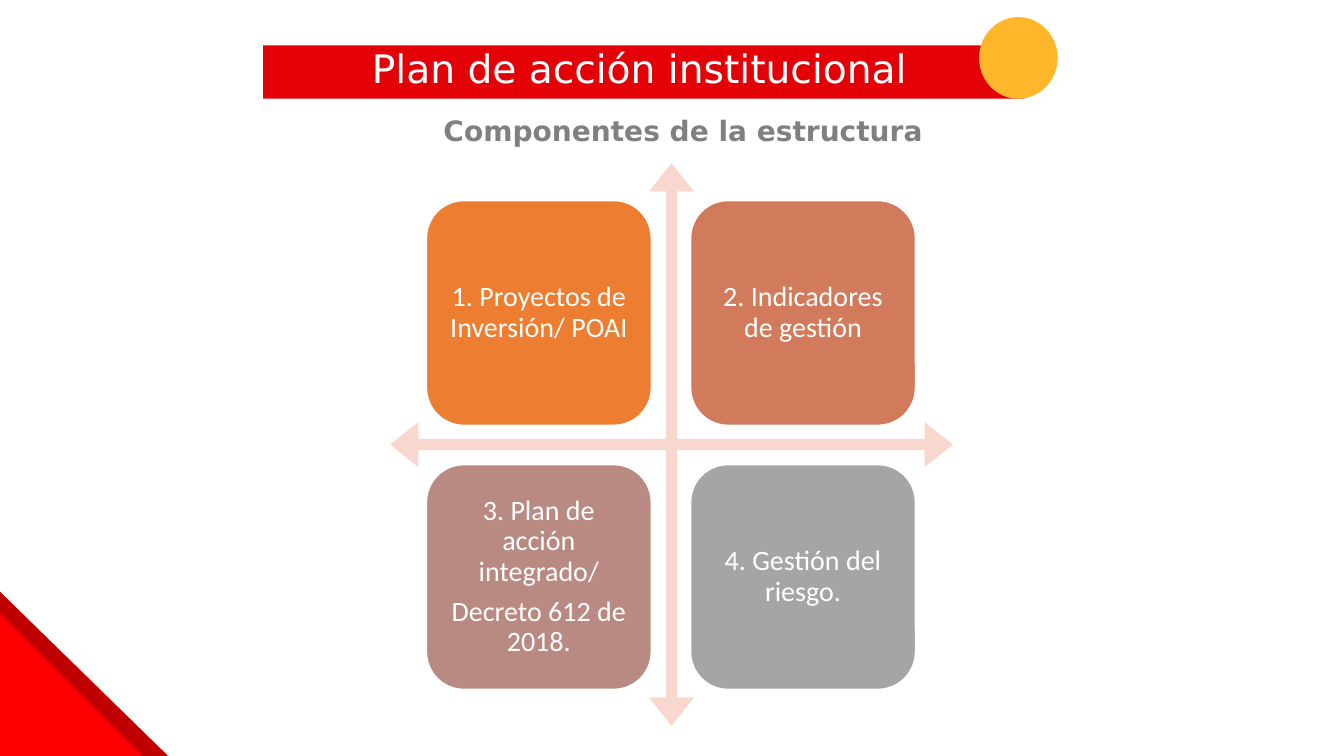
from dataclasses import dataclass

from pptx import Presentation
from pptx.dml.color import RGBColor
from pptx.enum.shapes import MSO_SHAPE
from pptx.enum.text import MSO_ANCHOR, MSO_AUTO_SIZE, PP_ALIGN
from pptx.util import Inches, Pt

RECT = MSO_SHAPE.RECTANGLE
ELLIPSE = MSO_SHAPE.OVAL
TRIANGLE = MSO_SHAPE.RIGHT_TRIANGLE
QUAD_ARROW = MSO_SHAPE.QUAD_ARROW
ROUND_RECT = MSO_SHAPE.ROUNDED_RECTANGLE
MIDDLE = MSO_ANCHOR.MIDDLE
GROW = MSO_AUTO_SIZE.SHAPE_TO_FIT_TEXT
LEFT = PP_ALIGN.LEFT
CENTER = PP_ALIGN.CENTER


@dataclass(frozen=True)
class Theme:
    white: str = "FFFFFF"
    banner: str = "E30006"
    accent: str = "FEB72B"
    subtitle: str = "808080"
    corner_dark: str = "C00000"
    corner_bright: str = "FF0000"
    arrows: str = "F8D7CE"
    heading_font: str = "DejaVu Sans"
    body_font: str = "Calibri"
    title_size: int = 28
    body_size: int = 20


THEME = Theme()

COMPONENTS = [
    (["1. Proyectos de Inversión/ POAI"], "ED7D31"),
    (["2. Indicadores de gestión"], "D17B5C"),
    (["3. Plan de acción integrado/", "Decreto 612 de 2018."], "B98A82"),
    (["4. Gestión del riesgo."], "A5A5A5"),
]
GRID_LEFT, GRID_TOP = 4.23, 1.99
TILE, PITCH = 2.23, 2.62


def write(tf, lines, size=THEME.body_size, font=THEME.heading_font,
          color=THEME.white, bold=False, align=CENTER, spacing=None, after=None):
    tf.word_wrap = True
    for i, line in enumerate(lines):
        p = tf.add_paragraph() if i else tf.paragraphs[0]
        p.alignment = align
        p.line_spacing = spacing
        if after is not None:
            p.space_after = Pt(after)
        r = p.add_run()
        r.text = line
        r.font.size = Pt(size)
        r.font.name = font
        r.font.bold = bold
        r.font.color.rgb = RGBColor.from_string(color)


def add_block(s, kind, x, y, w, h, fill, line=None):
    sp = s.shapes.add_shape(kind, Inches(x), Inches(y), Inches(w), Inches(h))
    sp.shadow.inherit = False
    sp.fill.solid()
    sp.fill.fore_color.rgb = RGBColor.from_string(fill)
    if line:
        sp.line.color.rgb = RGBColor.from_string(line)
        sp.line.width = Pt(1)
    else:
        sp.line.fill.background()
    return sp


def add_heading(s, text, x, y, w, h, **fmt):
    tf = s.shapes.add_textbox(Inches(x), Inches(y), Inches(w), Inches(h)).text_frame
    write(tf, [text], **fmt)
    tf.auto_size = GROW


def add_tile(s, lines, fill, x, y):
    sp = add_block(s, ROUND_RECT, x, y, TILE, TILE, fill, line=THEME.white)
    tf = sp.text_frame
    tf.vertical_anchor = MIDDLE
    tf.margin_left = tf.margin_right = Inches(0.08)
    tf.margin_top = tf.margin_bottom = Inches(0.08)
    write(tf, lines, font=THEME.body_font, spacing=0.9, after=7)


def add_axes(s):
    sp = add_block(s, QUAD_ARROW, 3.87, 1.62, 5.58, 5.58, THEME.arrows)
    for i, value in enumerate((0.02, 0.04, 0.05)):
        sp.adjustments[i] = value


def main():
    prs = Presentation()
    prs.slide_width, prs.slide_height = Inches(13.33), Inches(7.5)
    s = prs.slides.add_slide(prs.slide_layouts[6])

    add_block(s, RECT, 2.61, 0.45, 7.55, 0.53, THEME.banner)
    add_block(s, ELLIPSE, 9.71, 0.17, 0.78, 0.81, THEME.accent)
    add_heading(s, "Plan de acción institucional", 1.73, 0.39, 9.22, 0.57,
                size=THEME.title_size)
    add_heading(s, "Componentes de la estructura", 4.3, 1.08, 5.41, 0.44,
                color=THEME.subtitle, bold=True, align=LEFT)

    add_block(s, TRIANGLE, 0, 5.87, 1.73, 1.69, THEME.corner_dark)
    add_block(s, TRIANGLE, 0, 6.09, 1.47, 1.47, THEME.corner_bright)

    add_axes(s)
    for i, (lines, fill) in enumerate(COMPONENTS):
        row, col = divmod(i, 2)
        add_tile(s, lines, fill, GRID_LEFT + col * PITCH, GRID_TOP + row * PITCH)

    prs.save("out.pptx")


if __name__ == "__main__":
    main()
